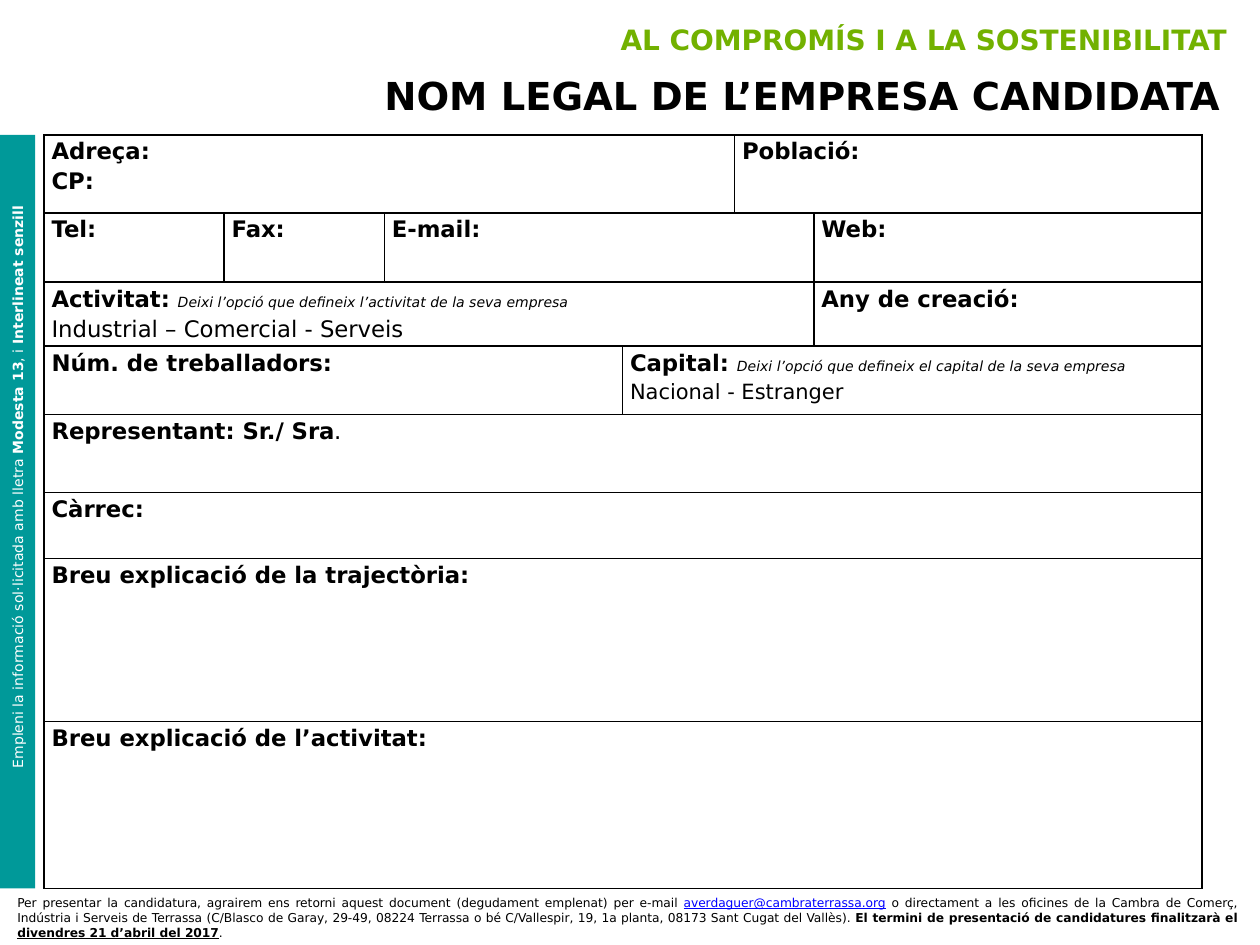
from lxml import etree
from pptx import Presentation
from pptx.dml.color import RGBColor
from pptx.enum.shapes import MSO_SHAPE
from pptx.enum.text import MSO_ANCHOR, PP_ALIGN
from pptx.oxml.ns import qn
from pptx.util import Cm, Pt

RECTANGLE = MSO_SHAPE.RECTANGLE
TOP, MIDDLE = MSO_ANCHOR.TOP, MSO_ANCHOR.MIDDLE
LEFT, CENTER, RIGHT, JUSTIFY = PP_ALIGN.LEFT, PP_ALIGN.CENTER, PP_ALIGN.RIGHT, PP_ALIGN.JUSTIFY

COLORS = {
    "text": "000000",
    "paper": "FFFFFF",
    "green": "72B100",
    "teal": "009999",
    "email": "0000FF",
}
FONT = "DejaVu Sans"

COLUMN_WIDTHS = [3.63, 3.23, 4.8, 2.26, 1.6, 7.82]
ROW_HEIGHTS = [1.57, 1.4, 1.29, 1.38, 1.57, 1.33, 3.29, 3.36]

BOLD = {"bold": True}
HINT = {"size": 8, "italic": True}

FIELDS = [
    (0, 0, 3, [[("Adreça:", BOLD)], [("CP:", BOLD)]]),
    (0, 4, 5, [[("Població:", BOLD)]]),
    (1, 0, 0, [[("Tel:", BOLD)]]),
    (1, 1, 1, [[("Fax:", BOLD)]]),
    (1, 2, 4, [[("E-mail:", BOLD)]]),
    (1, 5, 5, [[("Web:", BOLD)]]),
    (2, 0, 4, [
        [("Activitat: ", BOLD), ("Deixi l’opció que defineix l’activitat de la seva empresa", HINT)],
        [("Industrial – Comercial - Serveis", {})],
    ]),
    (2, 5, 5, [[("Any de creació:", BOLD)]]),
    (3, 0, 2, [[("Núm. de treballadors:", BOLD)]]),
    (3, 3, 5, [
        [("Capital: ", BOLD), ("Deixi l’opció que defineix el capital de la seva empresa", HINT)],
        [("Nacional - Estranger", {"size": 12})],
    ]),
    (4, 0, 5, [[("Representant: Sr./ Sra", BOLD), (".", {})]]),
    (5, 0, 5, [[("Càrrec:", BOLD)]]),
    (6, 0, 5, [[("Breu explicació de la trajectòria:", BOLD)]]),
    (7, 0, 5, [[("Breu explicació de l’activitat:", BOLD)]]),
]

FOOTER = [
    ("Per presentar la candidatura, agrairem ens retorni aquest document "
     "(degudament emplenat) per e-mail ", {}),
    ("averdaguer@cambraterrassa.org", {"color": "email", "underline": True}),
    (" o directament a les oficines de la Cambra de Comerç, Indústria i Serveis de Terrassa "
     "(C/Blasco de Garay, 29-49, 08224 Terrassa o bé C/Vallespir, 19, 1a planta, "
     "08173 Sant Cugat del Vallès). ", {}),
    ("El termini de presentació de candidatures finalitzarà el ", BOLD),
    ("divendres 21 d’abril del 2017", {"bold": True, "underline": True}),
    (".", {}),
]

INSTRUCTIONS = [
    ("Empleni la informació sol·licitada amb lletra ", {}),
    ("Modesta 13", BOLD),
    (", i ", {}),
    ("Interlineat senzill", BOLD),
]


class FormSlide:
    """Hold the style and the current slide of the application form."""

    def __init__(self, slide):
        self.slide = slide

    def color(self, name):
        return RGBColor.from_string(COLORS[name])

    def add_runs(self, paragraph, runs, size, color="text", align=LEFT):
        paragraph.alignment = align
        for text, style in runs:
            run = paragraph.add_run()
            run.text = text
            font = run.font
            font.name = FONT
            font.size = Pt(style.get("size", size))
            font.bold = style.get("bold", False)
            font.italic = style.get("italic", False)
            font.underline = style.get("underline", False)
            font.color.rgb = self.color(style.get("color", color))

    def heading(self, box, text, size, color="text", margin_right=0.25):
        shape = self.slide.shapes.add_textbox(*map(Cm, box))
        frame = shape.text_frame
        frame.word_wrap = True
        frame.margin_right = Cm(margin_right)
        self.add_runs(frame.paragraphs[0], [(text, BOLD)], size, color, RIGHT)

    def panel(self, box, fill, line=None, rotation=0):
        shape = self.slide.shapes.add_shape(RECTANGLE, *map(Cm, box))
        shape.shadow.inherit = False
        shape.rotation = rotation
        shape.fill.solid()
        shape.fill.fore_color.rgb = self.color(fill)
        if line:
            shape.line.color.rgb = self.color(line)
            shape.line.width = Pt(0.75)
        else:
            shape.line.fill.background()
        return shape

    def text_panel(self, box, fill, runs, size, color, align, anchor, line=None, rotation=0):
        frame = self.panel(box, fill, line, rotation).text_frame
        frame.word_wrap = True
        frame.vertical_anchor = anchor
        self.add_runs(frame.paragraphs[0], runs, size, color, align)

    def border(self, cell):
        properties = cell._tc.get_or_add_tcPr()
        for side in ("a:lnL", "a:lnR", "a:lnT", "a:lnB"):
            line = etree.SubElement(properties, qn(side), w=str(Pt(1)))
            fill = etree.SubElement(line, qn("a:solidFill"))
            etree.SubElement(fill, qn("a:srgbClr"), val=COLORS["text"])

    def form(self, left, top, fields):
        shape = self.slide.shapes.add_table(
            len(ROW_HEIGHTS), len(COLUMN_WIDTHS), Cm(left), Cm(top),
            Cm(sum(COLUMN_WIDTHS)), Cm(sum(ROW_HEIGHTS)))
        table = shape.table
        table.first_row = table.horz_banding = False
        for column, width in zip(table.columns, COLUMN_WIDTHS):
            column.width = Cm(width)
        for row, height in zip(table.rows, ROW_HEIGHTS):
            row.height = Cm(height)
        for cell in table.iter_cells():
            self.border(cell)
            cell.fill.background()
            cell.margin_left = cell.margin_right = Cm(0.15)
            cell.margin_top = cell.margin_bottom = 0
        for row, first, last, paragraphs in fields:
            cell = table.cell(row, first)
            if last > first:
                cell.merge(table.cell(row, last))
            frame = cell.text_frame
            for index, runs in enumerate(paragraphs):
                paragraph = frame.add_paragraph() if index else frame.paragraphs[0]
                paragraph.line_spacing = 1.15
                self.add_runs(paragraph, runs, 13)


def main():
    presentation = Presentation()
    presentation.slide_width = Cm(25.4)
    presentation.slide_height = Cm(19.05)
    page = FormSlide(presentation.slides.add_slide(presentation.slide_layouts[6]))

    page.heading((6.7, 0.33, 18.29, 0.94), "AL COMPROMÍS I A LA SOSTENIBILITAT", 16, "green")
    page.text_panel((0.1, 17.93, 25.1, 1.02), "paper", FOOTER, 7, "text", JUSTIFY, TOP, "paper")
    page.heading((6.91, 1.32, 18.21, 1.19), "NOM LEGAL DE L’EMPRESA CANDIDATA", 22,
                 margin_right=0.53)
    page.form(0.89, 2.72, FIELDS)
    page.panel((0, 2.72, 0.71, 15.19), "teal")
    page.text_panel((-5.74, 9.47, 12.19, 0.69), "teal", INSTRUCTIONS, 8, "paper", CENTER, MIDDLE,
                    rotation=270)

    presentation.save("out.pptx")


if __name__ == "__main__":
    main()
